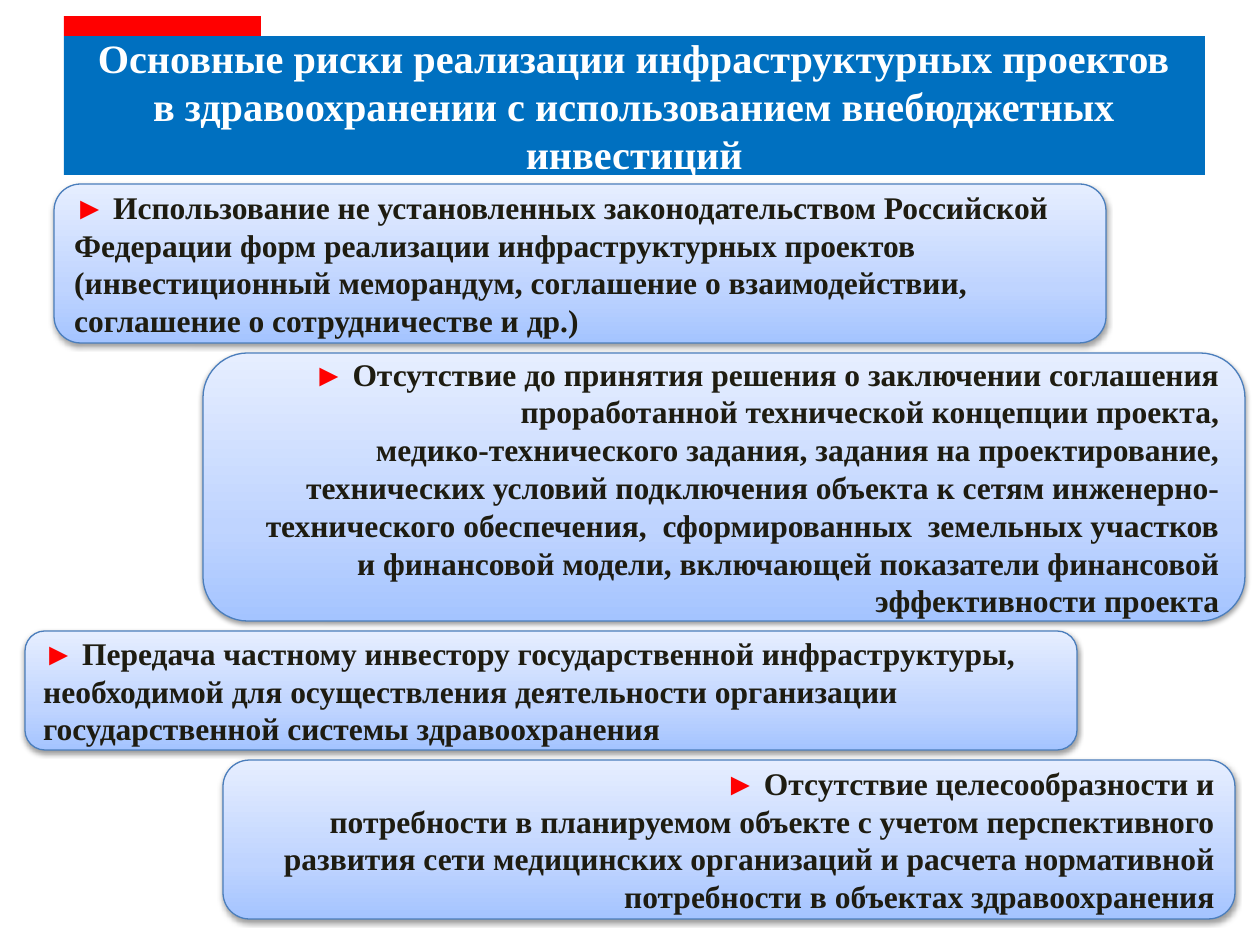
"""Build the slide on the main risks of health infrastructure projects."""
from pptx import Presentation
from pptx.dml.color import RGBColor
from pptx.enum.shapes import MSO_SHAPE
from pptx.enum.text import MSO_ANCHOR, MSO_AUTO_SIZE, PP_ALIGN
from pptx.oxml import parse_xml
from pptx.oxml.ns import nsdecls
from pptx.util import Emu, Pt

RECT, ROUND = MSO_SHAPE.RECTANGLE, MSO_SHAPE.ROUNDED_RECTANGLE
LEFT, CENTER, RIGHT = PP_ALIGN.LEFT, PP_ALIGN.CENTER, PP_ALIGN.RIGHT
MIDDLE, NO_FIT = MSO_ANCHOR.MIDDLE, MSO_AUTO_SIZE.NONE
TITLE_ONLY = 5

TITLE = ("Основные риски реализации инфраструктурных проектов\n"
         "в здравоохранении с использованием внебюджетных инвестиций")
RISKS = [
    dict(left=54, width=1052, height=159, align=LEFT, paragraphs=[
        "Использование не установленных законодательством Российской Федерации "
        "форм реализации инфраструктурных проектов (инвестиционный меморандум, "
        "соглашение о взаимодействии, соглашение о сотрудничестве и др.)"]),
    dict(left=203, width=1042, height=268, align=RIGHT, paragraphs=[
        "Отсутствие до принятия решения о заключении соглашения проработанной "
        "технической концепции проекта,\n"
        "медико-технического задания, задания на проектирование, технических "
        "условий подключения объекта к сетям инженерно-технического обеспечения,  "
        "сформированных  земельных участков\n"
        "и финансовой модели, включающей показатели финансовой эффективности проекта"]),
    dict(left=25, width=1052, height=119, align=LEFT, paragraphs=[
        "Передача частному инвестору государственной инфраструктуры, необходимой "
        "для осуществления деятельности организации государственной системы "
        "здравоохранения"]),
    dict(left=223, width=1012, height=159, align=RIGHT, paragraphs=[
        "Отсутствие целесообразности и",
        "потребности в планируемом объекте с учетом перспективного развития сети "
        "медицинских организаций и расчета нормативной потребности в объектах "
        "здравоохранения"]),
]
MARKER = "► "
RISKS_TOP, GAP = 184, 10
TITLE_BOX, ACCENT_BOX = (64, 36, 1141, 139), (64, 16, 197, 20)

THEME = dict(
    accent="FF0000", title_fill="0070C0", outline="4B7EBC",
    gradient=[(0, "A4C4FF"), (35, "BFD4FF"), (100, "E6EEFF")],
    title=dict(name="Times New Roman", size=Pt(23), bold=True, color="FFFFFF"),
    marker=dict(name="Times New Roman", size=Pt(18), bold=True, color="FF0000"),
    body=dict(name="Times New Roman", size=Pt(18), bold=True, color="1E1C11"),
)


def px(value):
    return Emu(round(value * 914400 / 126))


def rgb(value):
    return RGBColor.from_string(value)


def add_text(p, text, style):
    for i, line in enumerate(text.split("\n")):
        if i:
            p.add_line_break()
        r = p.add_run()
        r.text = line
        for key, value in style.items():
            if key == "color":
                r.font.color.rgb = rgb(value)
            else:
                setattr(r.font, key, value)


def paint(sp, color):
    sp.fill.solid()
    sp.fill.fore_color.rgb = rgb(color)


def add_box(slide, kind, box):
    sp = slide.shapes.add_shape(kind, *map(px, box))
    sp.shadow.inherit = False
    return sp


def add_gradient(sp):
    stops = "".join(f'<a:gs pos="{pos * 1000}"><a:srgbClr val="{color}"/></a:gs>'
                    for pos, color in THEME["gradient"])
    sp._element.spPr.insert(2, parse_xml(
        f'<a:gradFill {nsdecls("a")} rotWithShape="1"><a:gsLst>{stops}</a:gsLst>'
        '<a:lin ang="16200000" scaled="1"/></a:gradFill>'))


def add_shadow(sp):
    effects = sp._element.spPr.find(
        "{http://schemas.openxmlformats.org/drawingml/2006/main}effectLst")
    effects.append(parse_xml(
        f'<a:outerShdw {nsdecls("a")} blurRad="{Pt(3.1)}" dist="{Pt(1.6)}" '
        'dir="5400000" rotWithShape="0"><a:srgbClr val="000000">'
        '<a:alpha val="38000"/></a:srgbClr></a:outerShdw>'))


def add_title(slide):
    sp = slide.shapes.title
    sp.left, sp.top, sp.width, sp.height = map(px, TITLE_BOX)
    paint(sp, THEME["title_fill"])
    tf = sp.text_frame
    for key, value in dict(word_wrap=True, auto_size=NO_FIT,
                           vertical_anchor=MIDDLE).items():
        setattr(tf, key, value)
    p = tf.paragraphs[0]
    p.alignment = CENTER
    add_text(p, TITLE, THEME["title"])


def add_risk(slide, risk, top):
    sp = add_box(slide, ROUND, (risk["left"], top, risk["width"], risk["height"]))
    add_gradient(sp)
    add_shadow(sp)
    sp.line.color.rgb = rgb(THEME["outline"])
    sp.line.width = Pt(0.75)
    tf = sp.text_frame
    tf.word_wrap, tf.vertical_anchor = True, MIDDLE
    for i, text in enumerate(risk["paragraphs"]):
        p = tf.add_paragraph() if i else tf.paragraphs[0]
        p.alignment = risk["align"]
        if not i:
            add_text(p, MARKER, THEME["marker"])
        add_text(p, text, THEME["body"])


def main():
    prs = Presentation()
    prs.slide_width, prs.slide_height = px(1260), px(945)
    slide = prs.slides.add_slide(prs.slide_layouts[TITLE_ONLY])
    add_title(slide)
    accent = add_box(slide, RECT, ACCENT_BOX)
    paint(accent, THEME["accent"])
    accent.line.fill.background()
    top = RISKS_TOP
    for risk in RISKS:
        add_risk(slide, risk, top)
        top += risk["height"] + GAP
    prs.save("out.pptx")


if __name__ == "__main__":
    main()
